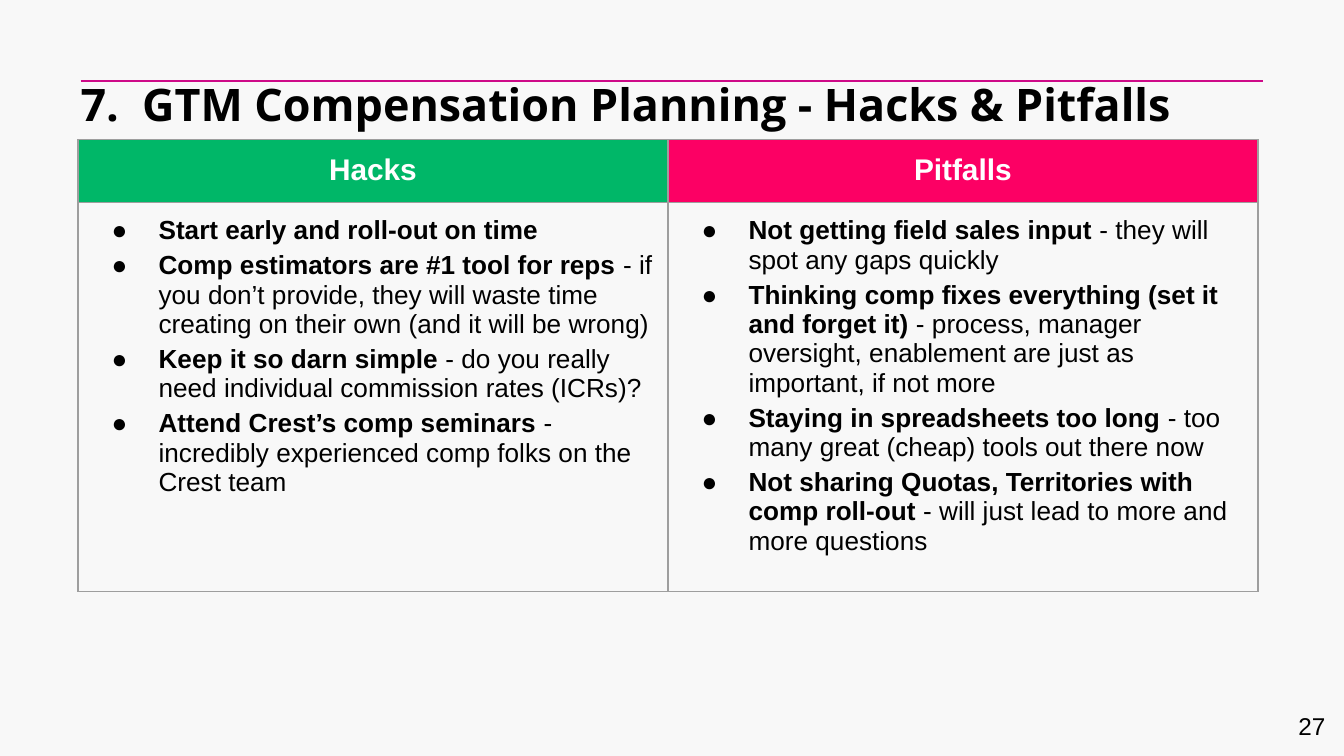
from lxml.etree import SubElement
from pptx import Presentation
from pptx.dml.color import RGBColor
from pptx.enum.shapes import MSO_CONNECTOR
from pptx.enum.text import PP_ALIGN
from pptx.oxml.ns import qn
from pptx.util import Inches, Pt

COLORS = {
    "background": "F8F8F8",
    "rule": "CE0A88",
    "text": "000000",
    "header_text": "FFFFFF",
    "hacks": "00B768",
    "pitfalls": "FC0064",
    "border": "9E9E9E",
}

# Each column: heading, fill colour, and points as (bold part, plain part)
COLUMNS = [
    ("Hacks", "hacks", [
        ("Start early and roll-out on time", ""),
        ("Comp estimators are #1 tool for reps",
         " - if you don’t provide, they will waste time creating on their own"
         " (and it will be wrong)"),
        ("Keep it so darn simple",
         " - do you really need individual commission rates (ICRs)?"),
        ("Attend Crest’s comp seminars ",
         "- incredibly experienced comp folks on the Crest team"),
    ]),
    ("Pitfalls", "pitfalls", [
        ("Not getting field sales input ", "- they will spot any gaps quickly"),
        ("Thinking comp fixes everything (set it and forget it) ",
         "- process, manager oversight, enablement are just as important,"
         " if not more"),
        ("Staying in spreadsheets too long",
         " - too many great (cheap) tools out there now"),
        ("Not sharing Quotas, Territories with comp roll-out",
         " - will just lead to more and more questions"),
    ]),
]


def rgb(name):
    return RGBColor.from_string(COLORS[name])


def set_font(font, size, color="text", name="Arial", bold=None):
    font.name = name
    font.size = Pt(size)
    font.bold = bold
    font.color.rgb = rgb(color)


def set_margins(target, margin):
    target.margin_left = target.margin_right = Inches(margin)
    target.margin_top = target.margin_bottom = Inches(margin)


def add_rule(slide):
    rule = slide.shapes.add_connector(
        MSO_CONNECTOR.STRAIGHT, Inches(0.6), Inches(0.6), Inches(9.4), Inches(0.6))
    rule.line.color.rgb = rgb("rule")
    rule.line.width = Pt(1)
    SubElement(rule._element.spPr, qn("a:effectLst"))


def add_text(slide, text, box, margin, size, align=PP_ALIGN.LEFT, **font_options):
    frame = slide.shapes.add_textbox(*map(Inches, box)).text_frame
    frame.word_wrap = True
    set_margins(frame, margin)
    paragraph = frame.paragraphs[0]
    paragraph.text = text
    paragraph.alignment = align
    set_font(paragraph.font, size, **font_options)


def add_borders(cell):
    properties = cell._tc.get_or_add_tcPr()
    for side in ("lnL", "lnR", "lnT", "lnB"):
        border = SubElement(properties, qn(f"a:{side}"), w=str(Pt(0.75)))
        fill = SubElement(border, qn("a:solidFill"))
        SubElement(fill, qn("a:srgbClr"), val=COLORS["border"])


def add_bullet(paragraph):
    properties = paragraph._p.get_or_add_pPr()
    properties.set("marL", str(Inches(0.5)))
    properties.set("indent", str(Inches(-0.35)))
    color = SubElement(properties, qn("a:buClr"))
    SubElement(color, qn("a:srgbClr"), val=COLORS["text"])
    SubElement(properties, qn("a:buFont"), typeface="Arial")
    SubElement(properties, qn("a:buChar"), char="●")


def fill_header(cell, heading, color):
    cell.fill.solid()
    cell.fill.fore_color.rgb = rgb(color)
    paragraph = cell.text_frame.paragraphs[0]
    paragraph.text = heading
    paragraph.alignment = PP_ALIGN.CENTER
    set_font(paragraph.font, 16, "header_text", bold=True)


def fill_points(cell, points):
    cell.fill.background()
    frame = cell.text_frame
    for index, (lead, detail) in enumerate(points):
        paragraph = frame.add_paragraph() if index else frame.paragraphs[0]
        add_bullet(paragraph)
        if index:
            paragraph.space_before = Pt(3)
        set_font(paragraph.font, 14)
        for text, bold in ((lead, True), (detail, False)):
            if text:
                run = paragraph.add_run()
                run.text = text
                run.font.bold = bold
    paragraph.space_after = Pt(3)


def add_comparison(slide):
    table = slide.shapes.add_table(
        2, len(COLUMNS), Inches(0.58), Inches(1.04), Inches(8.78), Inches(3.35)).table
    table.first_row = table.horz_banding = False
    table.rows[0].height = Inches(0.46)
    table.rows[1].height = Inches(2.89)
    for column, (heading, color, points) in enumerate(COLUMNS):
        header, body = table.cell(0, column), table.cell(1, column)
        for cell in (header, body):
            set_margins(cell, 0.1)
            add_borders(cell)
        fill_header(header, heading, color)
        fill_points(body, points)


def main():
    deck = Presentation()
    deck.slide_width = Inches(10)
    deck.slide_height = deck.slide_width * 9 // 16
    slide = deck.slides.add_slide(deck.slide_layouts[6])
    slide.background.fill.solid()
    slide.background.fill.fore_color.rgb = rgb("background")

    add_rule(slide)
    add_text(slide, "7.  GTM Compensation Planning - Hacks & Pitfalls",
             (0.6, 0.57, 8.82, 0.4), 0, 24, name="Open Sans", bold=True)
    add_comparison(slide)
    add_text(slide, "27", (9.36, 5.19, 0.6, 0.43), 0.1, 13, PP_ALIGN.RIGHT)
    deck.save("out.pptx")


if __name__ == "__main__":
    main()
